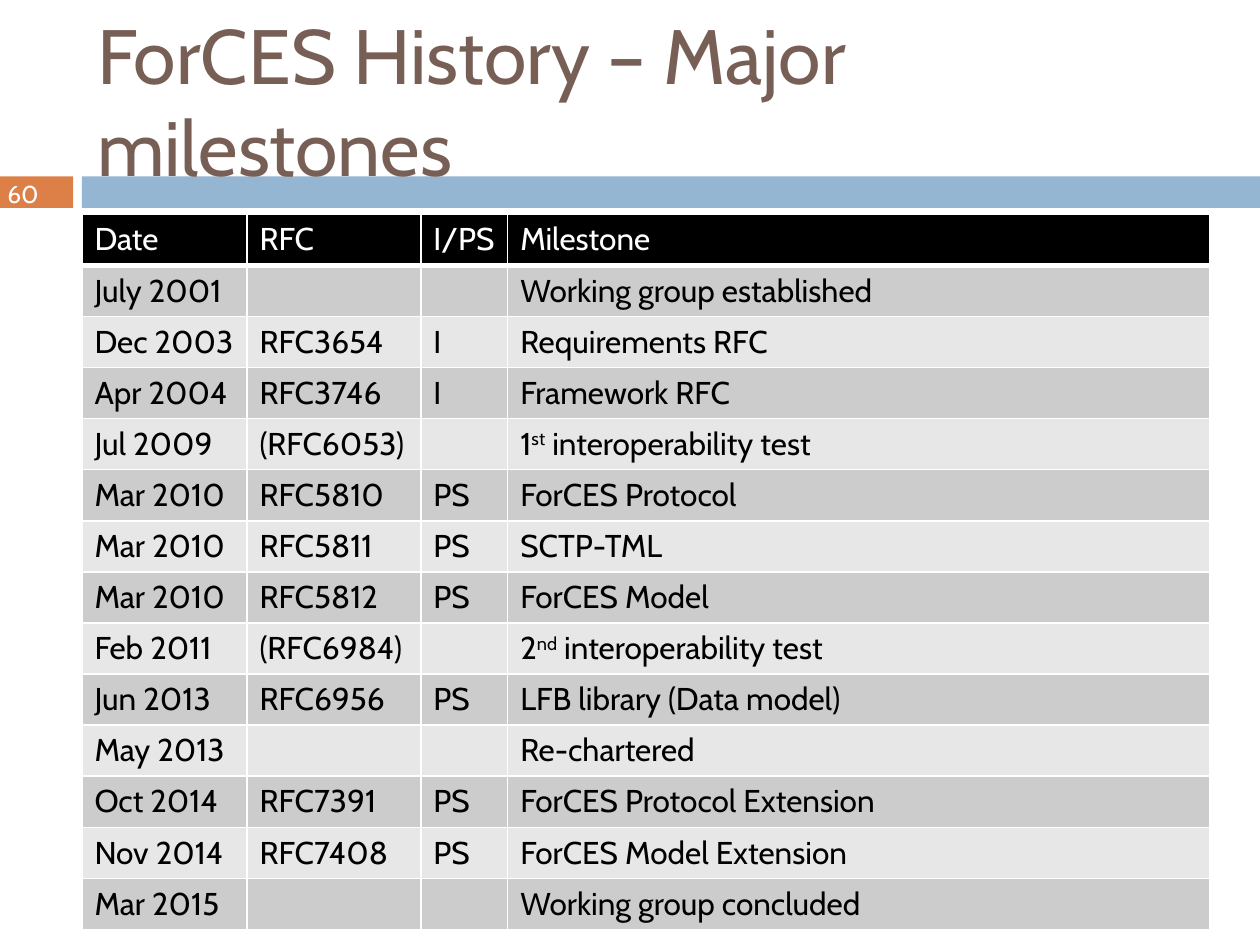
from lxml import etree
from pptx import Presentation
from pptx.dml.color import RGBColor
from pptx.enum.shapes import MSO_SHAPE
from pptx.enum.text import MSO_ANCHOR, MSO_AUTO_SIZE, PP_ALIGN
from pptx.oxml.ns import qn
from pptx.util import Inches, Pt

RECTANGLE = MSO_SHAPE.RECTANGLE
MIDDLE = MSO_ANCHOR.MIDDLE
FIXED_SIZE = MSO_AUTO_SIZE.NONE
GROW_TO_TEXT = MSO_AUTO_SIZE.SHAPE_TO_FIT_TEXT
LEFT = PP_ALIGN.LEFT

SLIDE_W, SLIDE_H = 10, 7.5
BAND_TOP, BAND_H = 1.4, 0.25
CONTENT_LEFT = 0.65
FONT = "Cabin"
COLORS = {
    "title": "775F55",
    "accent": "DD8047",
    "band": "94B6D2",
    "header": "000000",
    "odd_row": "CCCCCC",
    "even_row": "E7E7E7",
    "dark_text": "000000",
    "white": "FFFFFF",
}

# Table content; a tuple is text, superscript, text
HEADINGS = ("Date", "RFC", "I/PS", "Milestone")
COLUMN_WIDTHS = (1.31, 1.38, 0.69, 5.57)
TABLE_TOP, TABLE_H = 1.7, 5.68
MILESTONES = [
    ("July 2001", "", "", "Working group established"),
    ("Dec 2003", "RFC3654", "I", "Requirements RFC"),
    ("Apr 2004", "RFC3746", "I", "Framework RFC"),
    ("Jul 2009", "(RFC6053)", "", ("1", "st", " interoperability test")),
    ("Mar 2010", "RFC5810", "PS", "ForCES Protocol"),
    ("Mar 2010", "RFC5811", "PS", "SCTP-TML"),
    ("Mar 2010", "RFC5812", "PS", "ForCES Model"),
    ("Feb 2011", "(RFC6984)", "", ("2", "nd", " interoperability test")),
    ("Jun 2013", "RFC6956", "PS", "LFB library (Data model)"),
    ("May 2013", "", "", "Re-chartered"),
    ("Oct 2014", "RFC7391", "PS", "ForCES Protocol Extension"),
    ("Nov 2014", "RFC7408", "PS", "ForCES Model Extension"),
    ("Mar 2015", "", "", "Working group concluded"),
]


def rgb(name):
    return RGBColor.from_string(COLORS[name])


def write(frame, text, size=18, color="dark_text"):
    """Write text into a frame; every second part of a tuple is superscript."""
    paragraph = frame.paragraphs[0]
    paragraph.alignment = LEFT
    parts = (text,) if isinstance(text, str) else text
    for index, part in enumerate(parts):
        if not part:
            continue
        run = paragraph.add_run()
        run.text = part
        run.font.name = FONT
        run.font.size = Pt(size)
        run.font.bold = False
        run.font.color.rgb = rgb(color)
        if index % 2:
            run._r.get_or_add_rPr().set("baseline", "30000")


def add_band(slide, left, width, color):
    band = slide.shapes.add_shape(
        RECTANGLE, Inches(left), Inches(BAND_TOP), Inches(width), Inches(BAND_H))
    band.shadow.inherit = False
    band.fill.solid()
    band.fill.fore_color.rgb = rgb(color)
    band.line.fill.background()


def add_page_number(slide, number):
    box = slide.shapes.add_textbox(
        Inches(-0.04), Inches(1.37), Inches(0.94), Inches(0.34))
    box.text_frame.word_wrap = True
    box.text_frame.auto_size = GROW_TO_TEXT
    write(box.text_frame, number, size=14, color="white")


def set_title(slide, text):
    title = slide.shapes.title
    title.left, title.top = Inches(0.67), Inches(0.25)
    title.width, title.height = Inches(8.92), Inches(1.08)
    title.text_frame.auto_size = FIXED_SIZE
    title.text_frame.vertical_anchor = MIDDLE
    write(title.text_frame, text, size=44, color="title")


def set_borders(cell, bottom):
    """Draw white cell borders, 1 pt except for the given bottom width."""
    properties = cell._tc.get_or_add_tcPr()
    for index, (side, width) in enumerate(
            (("lnL", 1), ("lnR", 1), ("lnT", 1), ("lnB", bottom))):
        line = etree.Element(qn(f"a:{side}"), w=str(Pt(width)))
        fill = etree.SubElement(line, qn("a:solidFill"))
        etree.SubElement(fill, qn("a:srgbClr"), val=COLORS["white"])
        properties.insert(index, line)


def add_milestone_table(slide):
    rows = [HEADINGS, *MILESTONES]
    table = slide.shapes.add_table(
        len(rows), len(HEADINGS), Inches(CONTENT_LEFT), Inches(TABLE_TOP),
        Inches(sum(COLUMN_WIDTHS)), Inches(TABLE_H)).table
    for column, width in zip(table.columns, COLUMN_WIDTHS):
        column.width = Inches(width)
    for row_index, row in enumerate(rows):
        is_header = row_index == 0
        stripe = "odd_row" if row_index % 2 else "even_row"
        for column_index, text in enumerate(row):
            cell = table.cell(row_index, column_index)
            cell.fill.solid()
            cell.fill.fore_color.rgb = rgb("header" if is_header else stripe)
            set_borders(cell, bottom=3 if is_header else 1)
            write(cell.text_frame, text,
                  color="white" if is_header else "dark_text")


def main():
    presentation = Presentation()
    presentation.slide_width = Inches(SLIDE_W)
    presentation.slide_height = Inches(SLIDE_H)
    slide = presentation.slides.add_slide(presentation.slide_layouts[5])

    # Band with page number
    add_band(slide, 0, 0.58, "accent")
    add_band(slide, CONTENT_LEFT, SLIDE_W - CONTENT_LEFT, "band")
    add_page_number(slide, "60")

    # Title, kept in front of the band it overlaps
    set_title(slide, "ForCES History – Major milestones")
    slide.shapes._spTree.append(slide.shapes.title._element)

    # Milestones
    add_milestone_table(slide)
    presentation.save("out.pptx")


if __name__ == "__main__":
    main()
